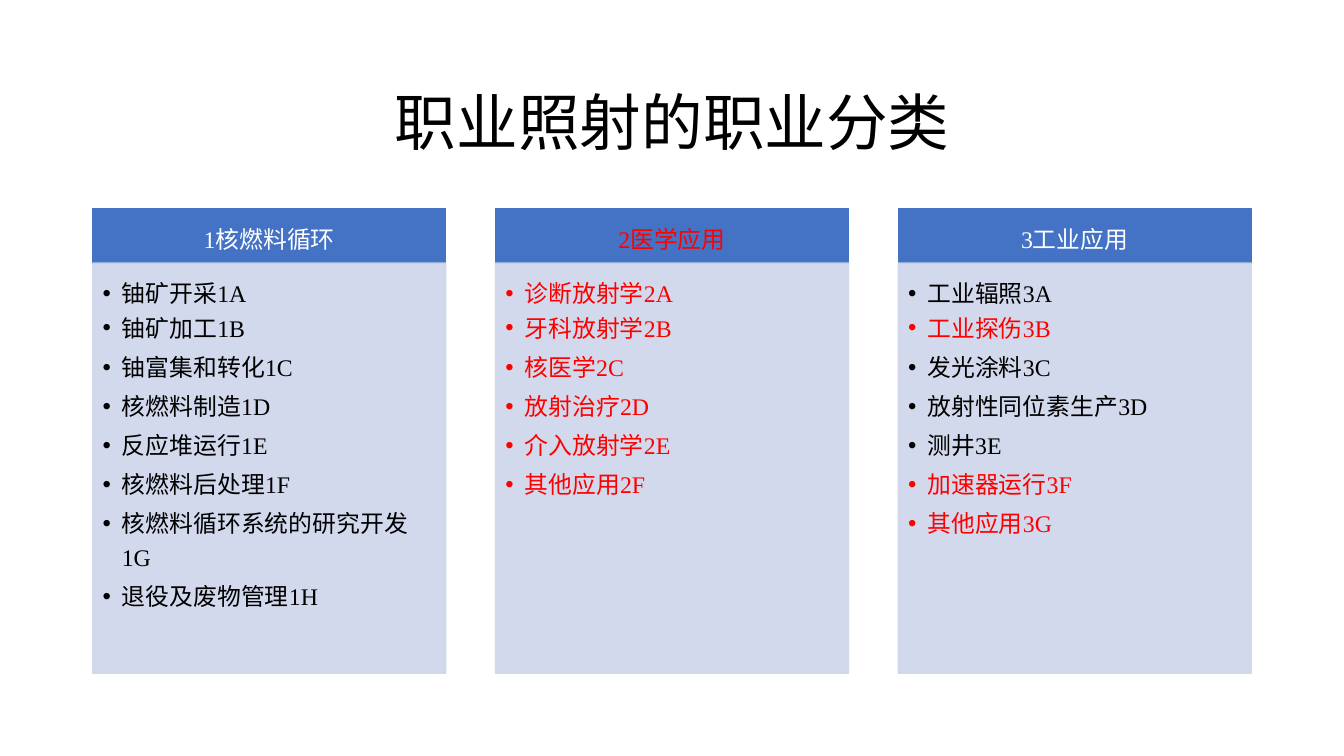
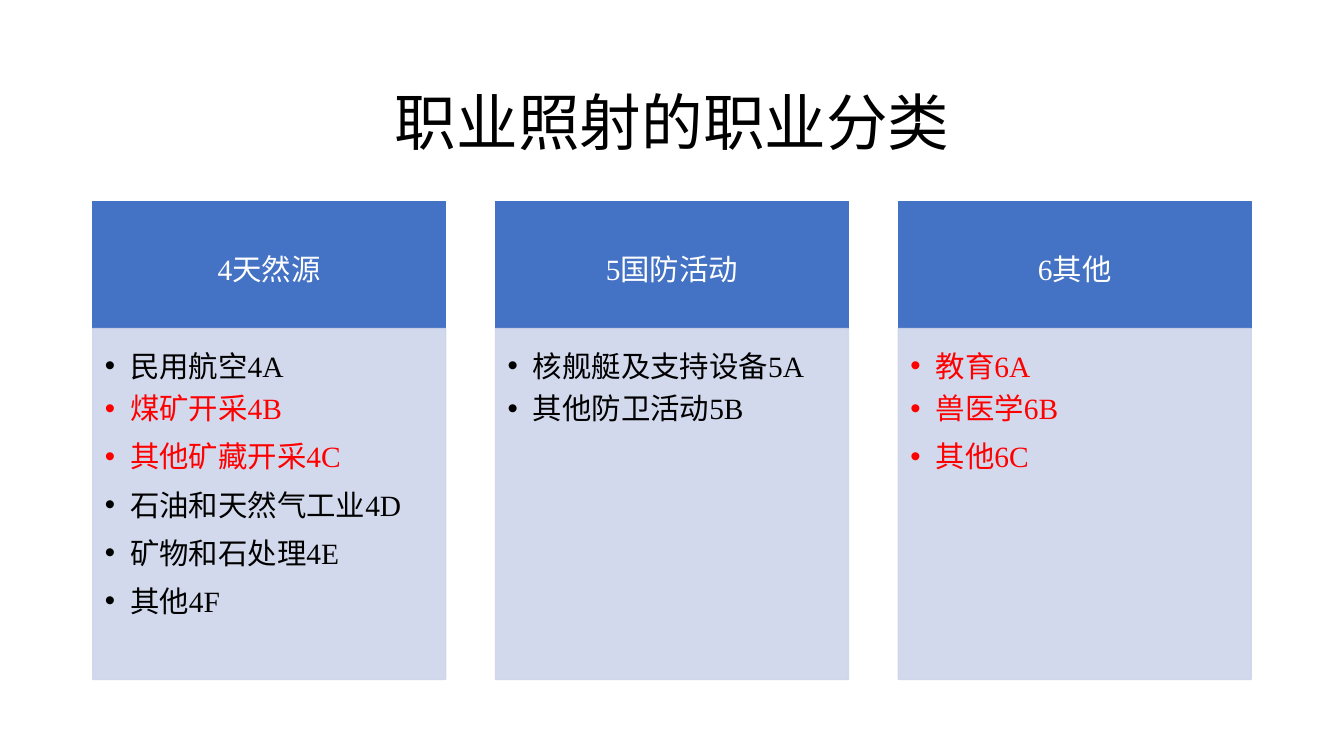
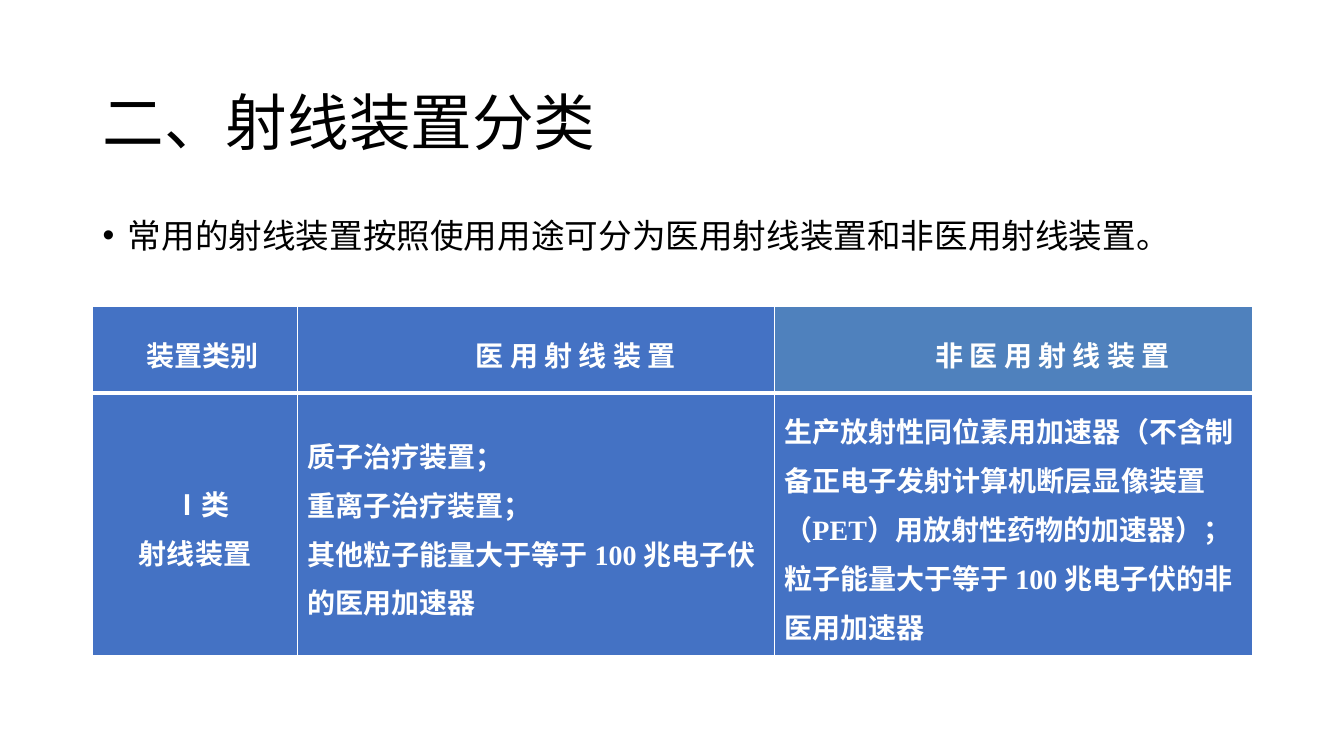
from lxml import etree
from pptx import Presentation
from pptx import util as u
from pptx.dml.color import RGBColor
from pptx.enum import shapes, text
from pptx.oxml.ns import qn

HUES = {"ink": "000000", "white": "FFFFFF", "red": "FF0000",
        "blue": "4472C4", "steel": "4F81BD", "pale": "CFD5EA"}
FONT = "Times New Roman"
LEFT, SPAN = 0.92, 11.5
MID, START = text.PP_ALIGN.CENTER, text.PP_ALIGN.LEFT

# Labels set in red
HOT = set("2医学应用 诊断放射学2A 牙科放射学2B 核医学2C 放射治疗2D 介入放射学2E 其他应用2F "
          "工业探伤3B 加速器运行3F 其他应用3G 煤矿开采4B 其他矿藏开采4C "
          "教育6A 兽医学6B 其他6C".split())


def hue(name):
    return RGBColor.from_string(HUES[name])


def tint(label, base):
    return "red" if label in HOT else base


def write(frame, lines, size, color="ink", align=START, pads=(0.1, 0.05, 0.1, 0.05),
          anchor=text.MSO_ANCHOR.TOP, bullet=0, after=0.2, bold=False):
    """Fill a frame; pads are left, top, right, bottom; bullet is the hanging indent."""
    frame.word_wrap = True
    frame.vertical_anchor = anchor
    (frame.margin_left, frame.margin_top,
     frame.margin_right, frame.margin_bottom) = map(u.Inches, pads)
    frame.text = "\n".join(lines)
    for i, para in enumerate(frame.paragraphs):
        if bullet:
            props = para._p.get_or_add_pPr()
            props.set("marL", str(u.Inches(bullet)))
            props.set("indent", str(-u.Inches(bullet)))
            etree.SubElement(props, qn("a:buFont")).set("typeface", "Arial")
            etree.SubElement(props, qn("a:buChar")).set("char", "•")
        para.alignment = align
        para.line_spacing = 1.2
        para.space_after = u.Pt(after if i else 0.2)
        for run in para.runs:
            font = run.font
            font.name, font.size, font.bold = FONT, u.Pt(size), bold
            font.color.rgb = hue(tint(run.text, color))


def note(slide, box, line, size, **style):
    shape = slide.shapes.add_textbox(*map(u.Inches, box))
    write(shape.text_frame, [line], size, **style)


def title(slide, line, align):
    note(slide, (LEFT, 0.4, SPAN, 1.45), line, 44, align=align,
         anchor=text.MSO_ANCHOR.MIDDLE)


def block(slide, box, fill, alpha=100):
    shape = slide.shapes.add_shape(shapes.MSO_SHAPE.RECTANGLE, *map(u.Inches, box))
    shape.shadow.inherit = False
    shape.fill.solid()
    shape.fill.fore_color.rgb = hue(fill)
    shape.line.color.rgb = hue(fill)
    shape.line.width = u.Pt(1)
    if alpha < 100:
        for node in shape._element.spPr.iter(qn("a:srgbClr")):
            etree.SubElement(node, qn("a:alpha")).set("val", str(alpha * 1000))
    return shape.text_frame


def panel(slide, box, split, size, label, items):
    """A heading band of height split above a bulleted list."""
    x, y, w, h = box
    side, edge = round(size * 0.0076, 2), round(size * 0.0045, 2)
    write(block(slide, (x, y, w, split), "blue"), [label], size, "white", MID,
          (side, edge, side, edge), text.MSO_ANCHOR.MIDDLE)
    inner = round(size * 0.0058, 2)
    write(block(slide, (x, y + split, w, h - split), "pale", 90), items, size,
          pads=(inner, inner, side, round(size * 0.0087, 2)),
          bullet=0.19 if size < 20 else 0.25, after=size * 0.2)


def classes(slide, top, height, split, size, groups):
    title(slide, "职业照射的职业分类", MID)
    wide = 3.5
    step = (SPAN - 0.01 - wide) / (len(groups) - 1)
    for i, (label, items) in enumerate(groups):
        panel(slide, (LEFT + i * step, top, wide, height), split, size,
              label, items.split())


def border(cell, sides):
    props = cell._tc.get_or_add_tcPr()
    for side, width in zip("LRTB", sides):
        line = etree.SubElement(props, qn("a:ln" + side), w=str(u.Pt(width)))
        fill = etree.SubElement(line, qn("a:solidFill"))
        etree.SubElement(fill, qn("a:srgbClr")).set("val", HUES["white"])


def grid(slide, box, cols, rows, data):
    table = slide.shapes.add_table(len(rows), len(cols), *map(u.Inches, box)).table
    table.horz_banding = False
    for col, width in zip(table.columns, cols):
        col.width = u.Inches(width)
    for row, height in zip(table.rows, rows):
        row.height = u.Inches(height)
    for r, line in enumerate(data):
        for c, (lines, align, shift) in enumerate(line):
            cell = table.cell(r, c)
            border(cell, (1, 1, 1, 3) if r == 0 else (1, 1, 3, 1))
            cell.fill.solid()
            cell.fill.fore_color.rgb = hue("steel" if (r, c) == (0, 2) else "blue")
            write(cell.text_frame, lines, 20, "white", align, (0, 0, 0, 0), bold=True)
            cell.vertical_anchor = text.MSO_ANCHOR.MIDDLE
            if shift:
                first = cell.text_frame.paragraphs[0]._p.get_or_add_pPr()
                first.set("marL", str(u.Inches(shift)))


def devices(slide):
    title(slide, "二、射线装置分类", START)
    note(slide, (LEFT, 2, SPAN, 4.76),
         "常用的射线装置按照使用用途可分为医用射线装置和非医用射线装置。", 24, bullet=0.25)
    heads = [(["装置类别"], MID, 0.15),
             (["医 用 射 线 装 置"], MID, 0.79),
             (["非 医 用 射 线 装 置"], MID, 0.78)]
    first = [(["Ⅰ类", "射线装置"], MID, 0.12),
             (["质子治疗装置；", "重离子治疗装置；",
               "其他粒子能量大于等于 100 兆电子伏的医用加速器"], START, 0),
             (["生产放射性同位素用加速器（不含制备正电子发射计算机断层显像装置（PET）"
               "用放射性药物的加速器）；",
               "粒子能量大于等于 100 兆电子伏的非医用加速器"], START, 0)]
    grid(slide, (LEFT, 3.04, SPAN, 3.46), (2.03, 4.73, 4.74), (0.86, 2.6),
         [heads, first])


def main():
    deck = Presentation()
    deck.slide_width, deck.slide_height = u.Inches(13.33), u.Inches(7.5)
    one, two, three = [deck.slides.add_slide(deck.slide_layouts[6]) for _ in range(3)]
    classes(one, 2.07, 4.61, 0.54, 17, [
        ("1核燃料循环", "铀矿开采1A 铀矿加工1B 铀富集和转化1C 核燃料制造1D 反应堆运行1E "
                   "核燃料后处理1F 核燃料循环系统的研究开发1G 退役及废物管理1H"),
        ("2医学应用", "诊断放射学2A 牙科放射学2B 核医学2C 放射治疗2D 介入放射学2E 其他应用2F"),
        ("3工业应用", "工业辐照3A 工业探伤3B 发光涂料3C 放射性同位素生产3D 测井3E "
                  "加速器运行3F 其他应用3G")])
    classes(two, 2, 4.74, 1.26, 21, [
        ("4天然源", "民用航空4A 煤矿开采4B 其他矿藏开采4C 石油和天然气工业4D 矿物和石处理4E 其他4F"),
        ("5国防活动", "核舰艇及支持设备5A 其他防卫活动5B"),
        ("6其他", "教育6A 兽医学6B 其他6C")])
    devices(three)
    deck.save("out.pptx")


if __name__ == "__main__":
    main()
